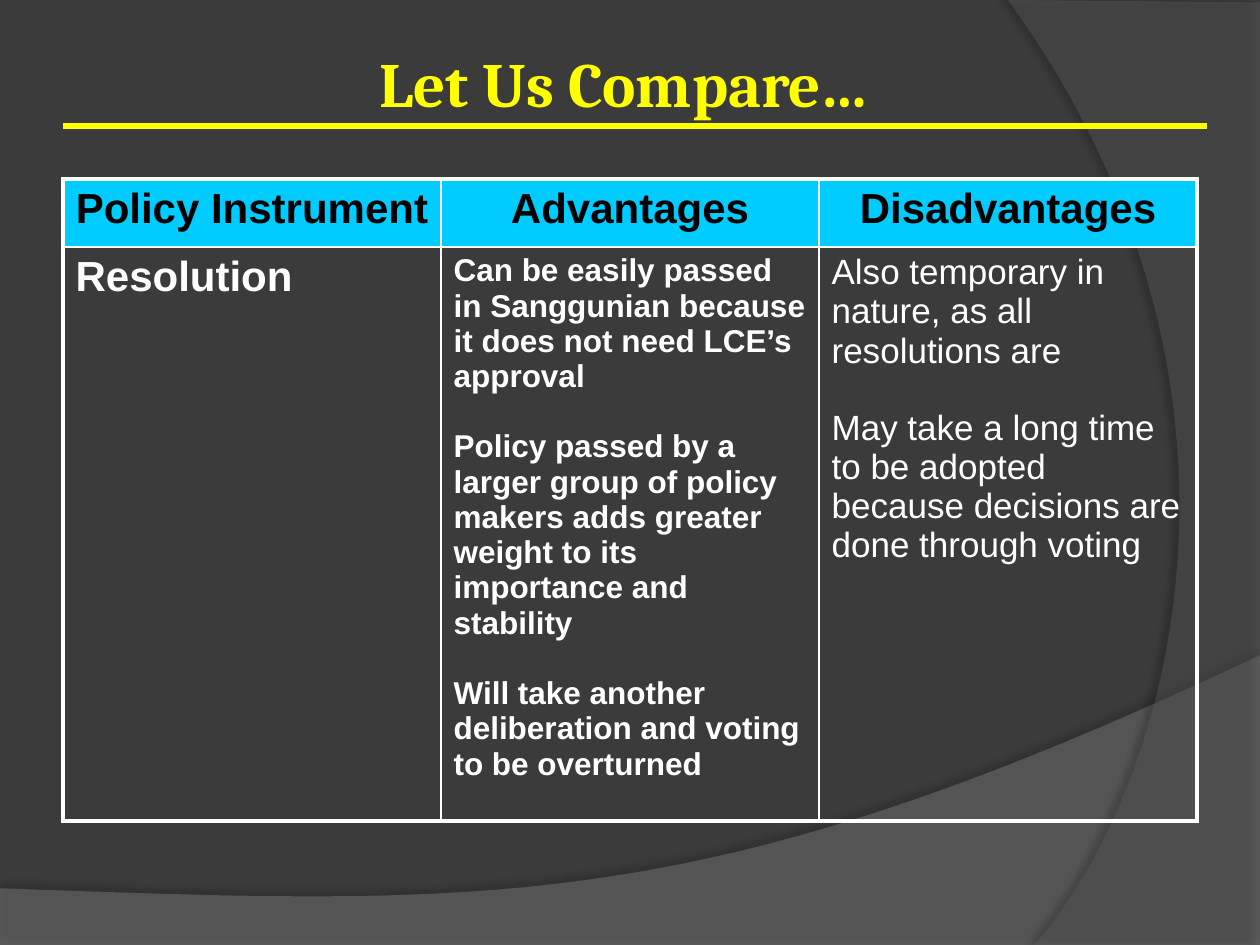
"""Build a slide that compares the merits of a policy instrument."""
from dataclasses import dataclass

from lxml import etree
from pptx import Presentation
from pptx.dml.color import RGBColor
from pptx.enum.shapes import MSO_CONNECTOR
from pptx.enum.text import MSO_ANCHOR, PP_ALIGN
from pptx.oxml import parse_xml
from pptx.oxml.ns import qn
from pptx.util import Inches, Pt

LINE = MSO_CONNECTOR.STRAIGHT
BOTTOM = MSO_ANCHOR.BOTTOM
LEFT, CENTER = PP_ALIGN.LEFT, PP_ALIGN.CENTER
SPACE = "http://schemas.openxmlformats.org/drawingml/2006/main"


@dataclass
class Theme:
    back: str = "3B3B3B"
    hill: str = "7F7F7F"
    arc: str = "5E5E5E"
    gold: str = "FFFF00"
    head: str = "00CCFF"
    dark: str = "000000"
    light: str = "FFFFFF"
    serif: str = "Cambria"
    sans: str = "Arial"
    title: int = 36
    large: int = 24
    mid: int = 20
    small: int = 18
    thick: float = 2.25
    thin: float = 1


def style(para, face, size, color, bold, align):
    para.alignment = align
    font = para.font
    font.name, font.size, font.bold = face, Pt(size), bold
    font.color.rgb = RGBColor.from_string(color)


def bezier(ends, steps=60):
    a, b, c, d = ends
    return [
        tuple(
            (1 - t) ** 3 * a[i] + 3 * (1 - t) ** 2 * t * b[i]
            + 3 * (1 - t) * t**2 * c[i] + t**3 * d[i]
            for i in (0, 1)
        )
        for t in (n / steps for n in range(steps + 1))
    ]


theme = Theme()
deck = Presentation()
deck.slide_width, deck.slide_height = Inches(10), Inches(7.5)
wide, high = deck.slide_width, deck.slide_height
col, row = wide / 20, high / 15
slide = deck.slides.add_slide(deck.slide_layouts[6])
shapes = slide.shapes
back = slide.background.fill
back.solid()
back.fore_color.rgb = RGBColor.from_string(theme.back)

hill = [(0, 15), (20, 15)] + bezier([(20, 10.4), (11.18, 14.58), (7.82, 14.38), (0, 14.1)])
arc = [(20, 0.04), (20, 15)] + bezier([(16.42, 15), (18.7, 12.38), (20.36, 6), (16, 0)])
for points, color, alpha, shade, turn in (
    (hill, theme.hill, 45, 35, 270),
    (arc, theme.arc, 40, 45, 180),
):
    spots = [(round(x * col), round(y * row)) for x, y in points]
    pen = shapes.build_freeform(*spots[0])
    pen.add_line_segments(spots[1:], close=True)
    curve = pen.convert_to_shape()
    curve.line.fill.background()
    curve.fill.solid()
    curve.fill.fore_color.rgb = RGBColor.from_string(color)
    tint = curve.fill._xPr.find(".//" + qn("a:srgbClr"))
    etree.SubElement(tint, qn("a:alpha"), val=str(alpha * 1000))
    curve._element.spPr.append(parse_xml(
        f'<a:effectLst xmlns:a="{SPACE}"><a:outerShdw blurRad="{Pt(4)}" dist="{Pt(4)}" '
        f'dir="{turn * 60000}" algn="ctr" rotWithShape="0"><a:srgbClr val="000000">'
        f'<a:alpha val="{shade * 1000}"/></a:srgbClr></a:outerShdw></a:effectLst>'
    ))

title = shapes.add_textbox(Inches(0.83), Inches(0.17), Inches(8.25), Inches(0.83))
frame = title.text_frame
frame.word_wrap = True
frame.vertical_anchor = BOTTOM
frame.text = "Let Us Compare…"
style(frame.paragraphs[0], theme.serif, theme.title, theme.gold, True, CENTER)

heads = ["Policy Instrument", "Advantages", "Disadvantages"]
facts = [
    ["Resolution"],
    [
        "Can be easily passed in Sanggunian because it does not need LCE’s approval",
        "Policy passed by a larger group of policy makers adds greater weight to its "
        "importance and stability",
        "Will take another deliberation and voting to be overturned",
    ],
    [
        "Also temporary in nature, as all resolutions are",
        "May take a long time to be adopted because decisions are done through voting",
    ],
]
looks = [(theme.large, True), (theme.small, True), (theme.mid, False)]
tall = [Inches(0.54), Inches(4.29)]
grid = shapes.add_table(2, 3, int(col), Inches(1.42), int(18 * col), sum(tall)).table
grid.first_row = grid.horz_banding = False
for i, size in enumerate(tall):
    grid.rows[i].height = size
for r in range(2):
    for c in range(3):
        cell = grid.cell(r, c)
        props = cell._tc.get_or_add_tcPr()
        for side, edge in (("L", c == 0), ("R", c == 2), ("T", r == 0), ("B", r == 1)):
            width = Pt(theme.thick if edge else theme.thin)
            props.append(parse_xml(
                f'<a:ln{side} xmlns:a="{SPACE}" w="{width}"><a:solidFill>'
                f'<a:srgbClr val="{theme.light}"/></a:solidFill></a:ln{side}>'
            ))
        if r == 0:
            cell.fill.solid()
            cell.fill.fore_color.rgb = RGBColor.from_string(theme.head)
            cell.text = heads[c]
            style(cell.text_frame.paragraphs[0], theme.sans, theme.large, theme.dark, True, CENTER)
        else:
            cell.fill.background()
            cell.text = "\n".join(facts[c])
            size, bold = looks[c]
            for n, para in enumerate(cell.text_frame.paragraphs):
                style(para, theme.sans, size, theme.light, bold, LEFT)
                para.space_before = Pt(size + 2 if n else 0)

rule = shapes.add_connector(LINE, int(col), int(2 * row), Inches(9.58), int(2 * row))
rule.line.color.rgb = RGBColor.from_string(theme.gold)
rule.line.width = Pt(3)
etree.SubElement(rule._element.spPr, qn("a:effectLst"))

deck.save("out.pptx")
